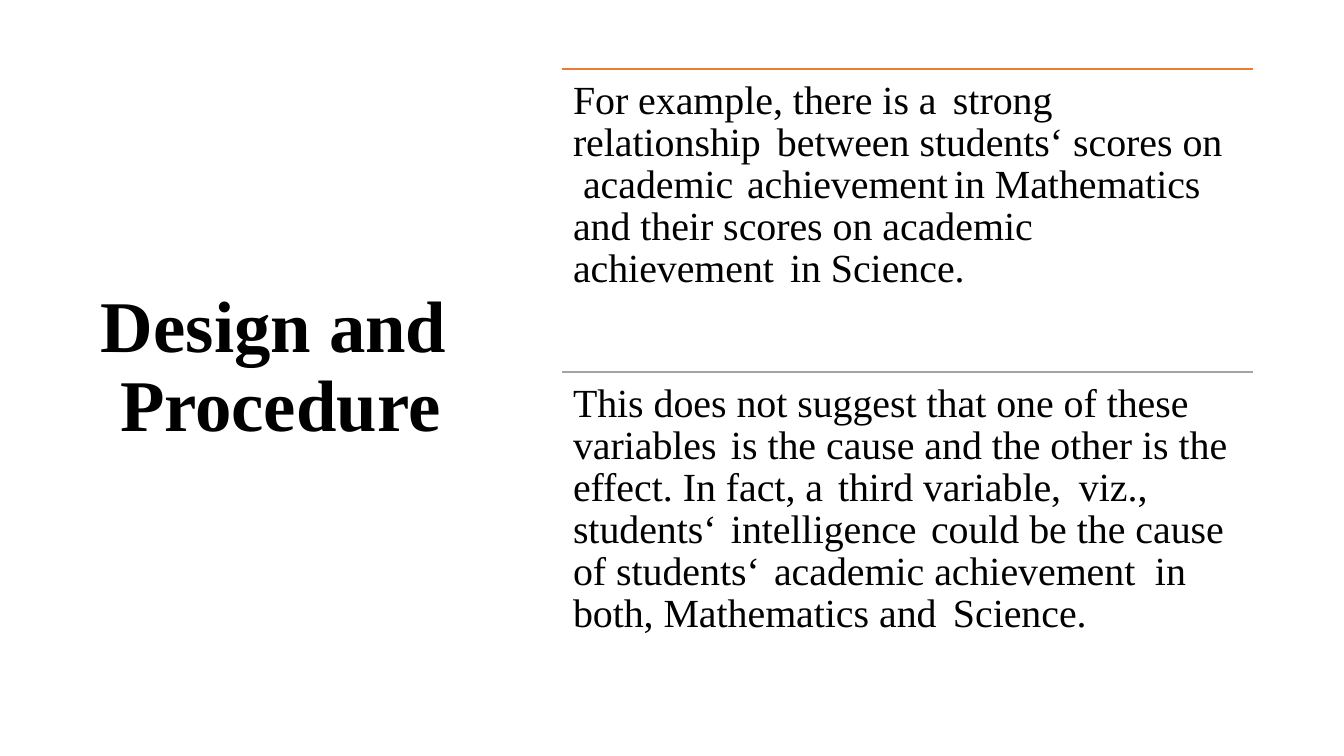
import lxml.etree
import pptx
import pptx.dml.color
import pptx.enum.shapes
import pptx.enum.text
import pptx.oxml.ns
import pptx.util

BLACK = pptx.dml.color.RGBColor(0x00, 0x00, 0x00)
ORANGE = pptx.dml.color.RGBColor(0xEC, 0x7C, 0x30)
GREY = pptx.dml.color.RGBColor(0xA4, 0xA4, 0xA4)
FONT = "Times New Roman"
EMU_PER_PX = 914400 / 100.8

TITLE_LINES = ["Design and", "\tProcedure"]

# Top, width, height, tab stops and lines of each body box
BODY = [
    (73, 483, 51, [380], ["For example, there is a\tstrong"]),
    (115, 660, 178, [10, 174, 204, 217, 381], [
        "relationship\tbetween students‘ scores on",
        "\tacademic\tachievement\tin Mathematics",
        "and their scores on academic",
        "achievement\t\tin Science.",
    ]),
    (376, 667, 261, [158, 201, 265, 358, 380, 506, 582], [
        "This does not suggest that one of these",
        "variables\tis the cause and the other is the",
        "effect. In fact, a\tthird variable,\tviz.,",
        "students‘\tintelligence\tcould be the cause",
        "of students‘\tacademic achievement\tin",
        "both, Mathematics and\tScience.",
    ]),
]
BODY_LEFT = 573
RULES = [(69, ORANGE), (372, GREY)]
RULE_LEFT, RULE_RIGHT = 562, 1253


def px(length):
    return pptx.util.Emu(round(length * EMU_PER_PX))


def add_text(page, lines, left, top, width, height, *, size, pitch, inset, tabs, bold=False):
    """Add lines as one paragraph; tabs are px from the left edge."""
    box = page.shapes.add_textbox(px(left), px(top), px(width), px(height))
    frame = box.text_frame
    frame.word_wrap = True
    frame.vertical_anchor = pptx.enum.text.MSO_ANCHOR.TOP
    frame.margin_left = frame.margin_right = frame.margin_bottom = 0
    frame.margin_top = px(inset)
    para = frame.paragraphs[0]
    para.text = "\v".join(lines)
    para.line_spacing = pptx.util.Pt(pitch)
    qn = pptx.oxml.ns.qn
    tab_list = lxml.etree.SubElement(para._p.get_or_add_pPr(), qn("a:tabLst"))
    for stop in tabs:
        lxml.etree.SubElement(tab_list, qn("a:tab"), pos=str(px(stop)), algn="l")
    for span in para.runs:
        span.font.name = FONT
        span.font.size = pptx.util.Pt(size)
        span.font.bold = bold
        span.font.color.rgb = BLACK


def add_rule(page, top, color):
    rule = page.shapes.add_connector(
        pptx.enum.shapes.MSO_CONNECTOR.STRAIGHT,
        px(RULE_LEFT), px(top), px(RULE_RIGHT), px(top))
    rule.line.color.rgb = color
    rule.line.width = pptx.util.Pt(1)
    lxml.etree.SubElement(rule._element.spPr, pptx.oxml.ns.qn("a:effectLst"))


def main():
    deck = pptx.Presentation()
    deck.slide_width, deck.slide_height = px(1344), px(756)
    page = deck.slides.add_slide(deck.slide_layouts[6])

    add_text(page, TITLE_LINES, 101, 277, 350, 169,
             size=52, pitch=56.1, inset=12, tabs=[19], bold=True)
    for top, color in RULES:
        add_rule(page, top, color)
    for top, width, height, tabs, lines in BODY:
        add_text(page, lines, BODY_LEFT, top, width, height,
                 size=28.5, pitch=29.9, inset=8, tabs=tabs)

    deck.save("out.pptx")


if __name__ == "__main__":
    main()
